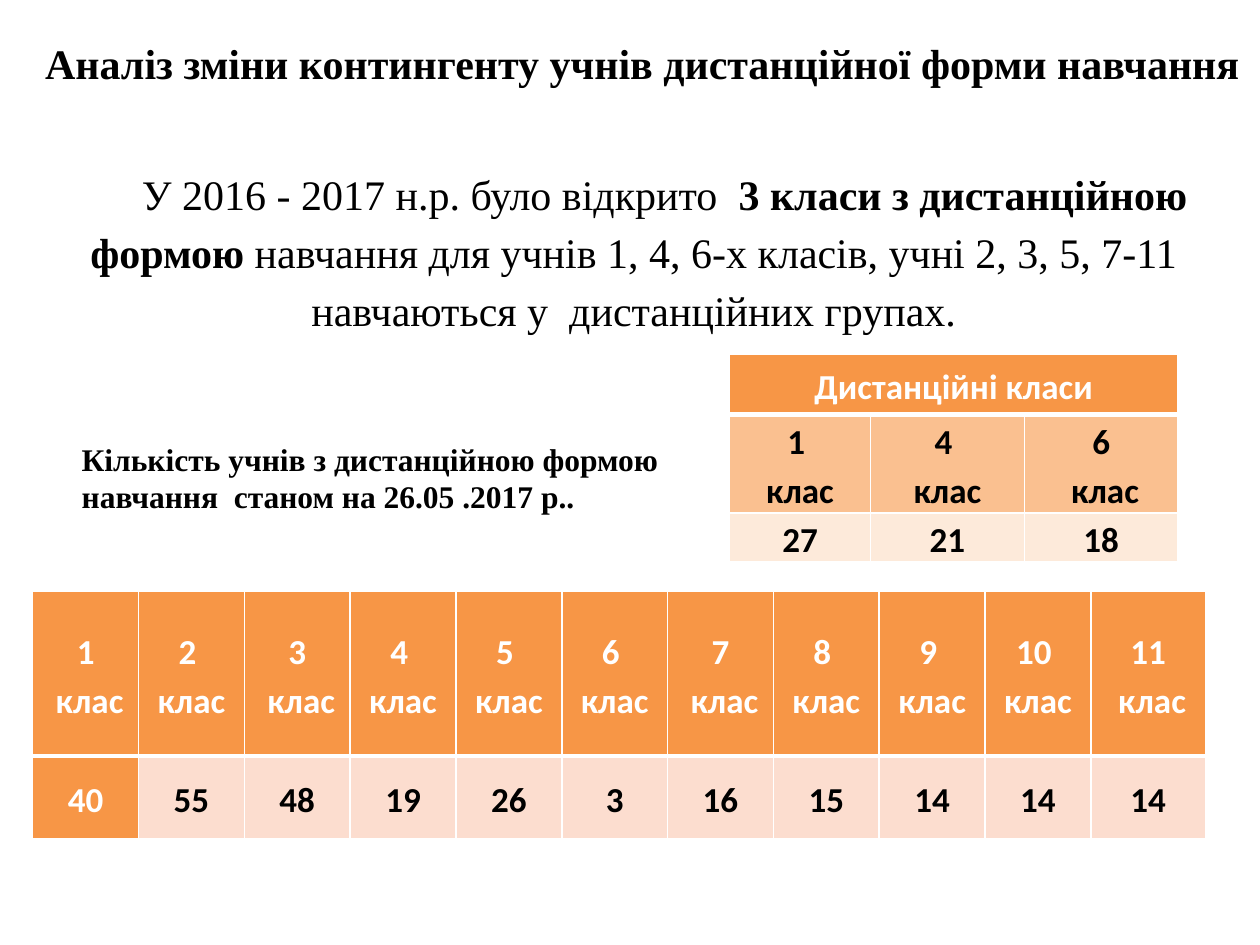
from lxml.etree import SubElement
from pptx import Presentation
from pptx.dml.color import RGBColor
from pptx.enum.text import MSO_ANCHOR, PP_ALIGN
from pptx.oxml.ns import qn
from pptx.util import Inches, Pt

COLORS = {
    "ink": "000000",
    "white": "FFFFFF",
    "orange": "F79646",
    "peach": "FAC090",
    "cream": "FDEADA",
    "rose": "FCDDCF",
}


def assign(target, values):
    for name, value in values.items():
        setattr(target, name, value)


class Deck:
    serif = "Times New Roman"
    sans = "Calibri"
    center = {"alignment": PP_ALIGN.CENTER, "line_spacing": 1.15}

    def __init__(self, wide, high):
        self.show = Presentation()
        assign(self.show, {"slide_width": Inches(wide), "slide_height": Inches(high)})
        self.slide = self.show.slides.add_slide(self.show.slide_layouts[6])

    def run(self, para, text, font, size, bold, color):
        run = para.add_run()
        run.text = text
        assign(run.font, {"name": font, "size": Pt(size), "bold": bold})
        run.font.color.rgb = RGBColor.from_string(COLORS[color])

    def text(self, at, parts, size, form=None, indent=0):
        """Add one paragraph made of (text, bold) parts."""
        frame = self.slide.shapes.add_textbox(*map(Inches, at)).text_frame
        frame.word_wrap = True
        para = frame.paragraphs[0]
        assign(para, form or {})
        if indent:
            para._p.get_or_add_pPr().set("indent", str(Inches(indent)))
        for text, bold in parts:
            self.run(para, text, self.serif, size, bold, "ink")

    def border(self, cell, widths):
        """Draw white edges; widths maps an XML edge name to points."""
        props = cell._tc.get_or_add_tcPr()
        for edge, width in widths.items():
            line = SubElement(props, qn(f"a:{edge}"), w=str(Pt(width)))
            fill = SubElement(line, qn("a:solidFill"))
            SubElement(fill, qn("a:srgbClr"), val=COLORS["white"])

    def cell(self, cell, text, fill):
        color = "white" if fill == "orange" else "ink"
        assign(cell, {
            "margin_left": Inches(0.07), "margin_right": Inches(0.07),
            "margin_top": 0, "margin_bottom": 0,
            "vertical_anchor": MSO_ANCHOR.MIDDLE,
        })
        cell.fill.solid()
        cell.fill.fore_color.rgb = RGBColor.from_string(COLORS[fill])
        frame = cell.text_frame
        for i, line in enumerate(text.split("\n")):
            para = frame.add_paragraph() if i else frame.paragraphs[0]
            assign(para, self.center)
            self.run(para, line, self.sans, 20, True, color)

    def table(self, left, top, cols, rows):
        """Each row is (height, fills, texts); a lone text spans the row."""
        high = sum(row[0] for row in rows)
        box = map(Inches, (left, top, sum(cols), high))
        grid = self.slide.shapes.add_table(len(rows), len(cols), *box).table
        assign(grid, {"first_row": False, "horz_banding": False})
        for col, width in zip(grid.columns, cols):
            col.width = Inches(width)
        for r, (height, fills, texts) in enumerate(rows):
            grid.rows[r].height = Inches(height)
            edges = {"lnL": 1, "lnR": 1, "lnT": 3 if r == 1 else 1, "lnB": 1 if r else 3}
            for c in range(len(cols)):
                self.border(grid.cell(r, c), edges)
            if len(texts) == 1:
                grid.cell(r, 0).merge(grid.cell(r, len(cols) - 1))
            for c, (text, fill) in enumerate(zip(texts, fills)):
                self.cell(grid.cell(r, c), text, fill)


def grades(numbers, shifted):
    """Two-line labels; the space sits before the word for shifted grades."""
    return [f"{n}\n клас" if n in shifted else f"{n} \nклас" for n in numbers]


def main():
    deck = Deck(10, 7.5)
    deck.text((0.16, 1.23, 9.74, 1.8), [
        ("У 2016 - 2017 н.р. було відкрито  ", False),
        ("3 класи з дистанційною формою ", True),
        ("навчання для учнів 1, 4, 6-х класів, учні 2, 3, 5, 7-11 "
         "навчаються у  дистанційних групах.", False),
    ], 24, deck.center, 0.49)
    deck.text((0.55, 3.44, 5.24, 0.71), [
        ("Кількість учнів з дистанційною формою навчання  станом на 26.05 .2017 р..", True),
    ], 18)
    deck.text((0.26, 0.25, 9.74, 0.5), [
        ("Аналіз зміни контингенту учнів дистанційної форми навчання", True),
    ], 24)
    deck.table(5.79, 2.81, [1.12, 1.22, 1.22], [
        (0.48, ["orange"], ["Дистанційні класи"]),
        (0.78, ["peach"] * 3, grades((1, 4, 6), {6})),
        (0.39, ["cream"] * 3, ["27", "21", "18"]),
    ])
    counts = [40, 55, 48, 19, 26, 3, 16, 15, 14, 14, 14]
    deck.table(0.26, 4.69, [0.84] * 10 + [0.91], [
        (1.31, ["orange"] * 11, grades(range(1, 12), {1, 3, 7, 11})),
        (0.66, ["orange"] + ["rose"] * 10, [str(n) for n in counts]),
    ])
    deck.show.save("out.pptx")


if __name__ == "__main__":
    main()
